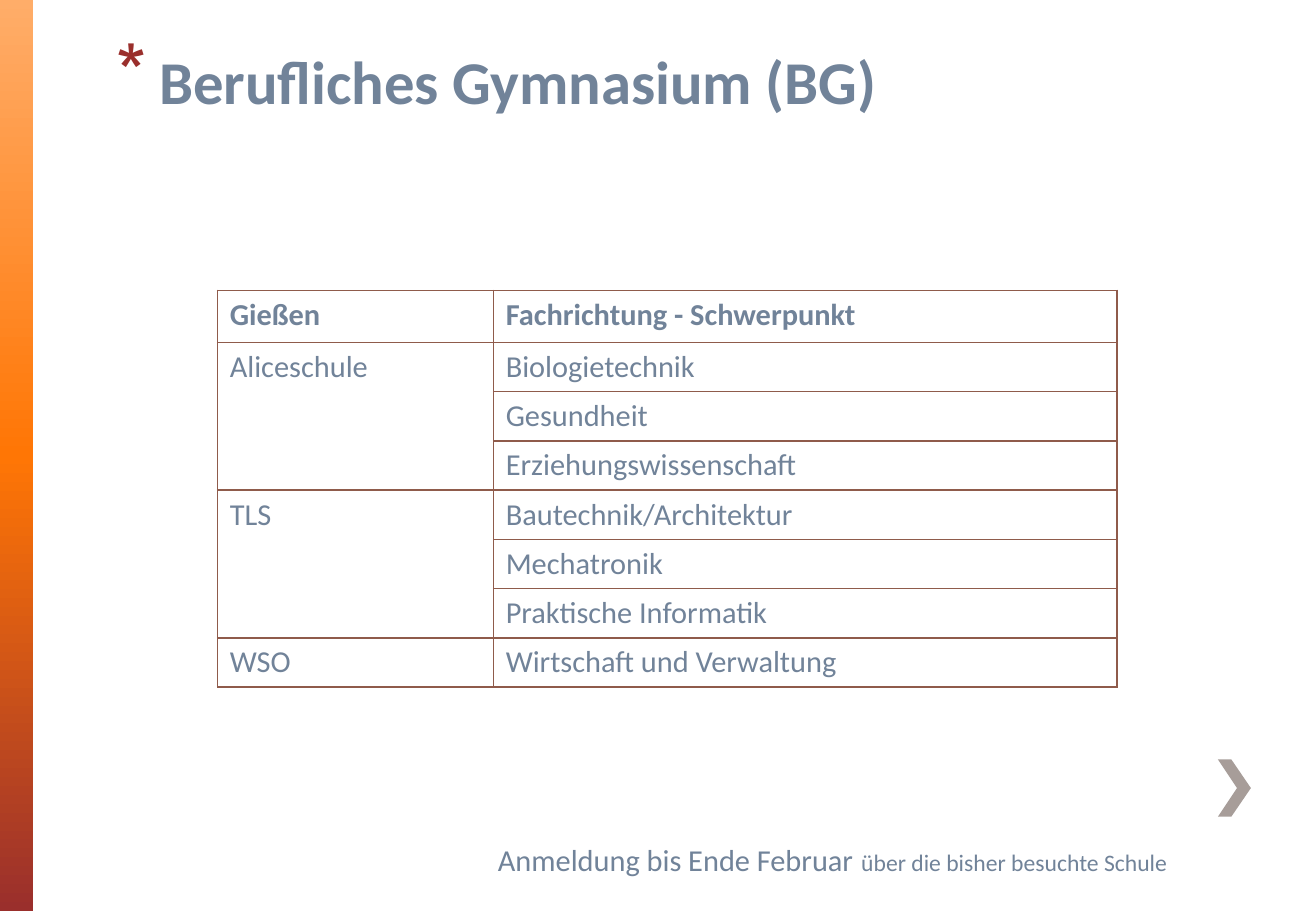
"""Build a slide listing the specialisations of the vocational grammar schools."""
from copy import deepcopy

from lxml import etree
from pptx import Presentation
from pptx.dml.color import RGBColor
from pptx.enum.shapes import MSO_SHAPE
from pptx.enum.text import MSO_ANCHOR, PP_ALIGN
from pptx.oxml import parse_xml
from pptx.oxml.ns import nsdecls, qn
from pptx.util import Cm, Pt

RECTANGLE = MSO_SHAPE.RECTANGLE
TOP = MSO_ANCHOR.TOP
LEFT = PP_ALIGN.LEFT
FONT = "Calibri"
SLATE = "718399"
RED = "9A2F2C"
BORDER = "8F5B4B"
BAR_STOPS = [("FFAD69", 0), ("FF7605", 0.5), (RED, 1)]
SCHOOLS = [
    ("Aliceschule", ["Biologietechnik", "Gesundheit", "Erziehungswissenschaft"]),
    ("TLS", ["Bautechnik/Architektur", "Mechatronik", "Praktische Informatik"]),
    ("WSO", ["Wirtschaft und Verwaltung"]),
]


def color(value):
    return RGBColor.from_string(value)


def style(font, size, bold=False):
    font.name = FONT
    font.size = Pt(size)
    font.bold = bold
    font.color.rgb = color(SLATE)


deck = Presentation()
deck.slide_width, deck.slide_height = Cm(27.51), Cm(19.05)
page = deck.slides.add_slide(deck.slide_layouts[5])

bar = page.shapes.add_shape(RECTANGLE, 0, 0, Cm(0.69), deck.slide_height)
bar.shadow.inherit = False
bar.line.fill.background()
bar.fill.gradient()
bar.fill.gradient_angle = 270
first_stop = bar.fill._fill._gradFill.gsLst[0]
first_stop.addnext(deepcopy(first_stop))
for stop, (value, position) in zip(bar.fill.gradient_stops, BAR_STOPS):
    stop.color.rgb = color(value)
    stop.position = position

outline = [(25.46, 15.88), (25.86, 16.48), (25.46, 17.08),
           (25.74, 17.08), (26.15, 16.48), (25.74, 15.88)]
points = [(Cm(x), Cm(y)) for x, y in outline]
builder = page.shapes.build_freeform(*points[0])
builder.add_line_segments(points[1:])
chevron = builder.convert_to_shape()
chevron.shadow.inherit = False
chevron.fill.solid()
chevron.fill.fore_color.rgb = color("A79D99")
chevron.line.fill.background()

title = page.shapes.title
title.left, title.top, title.width, title.height = Cm(2.18), Cm(0.97), Cm(23.72), Cm(2.11)
title.text_frame.text = "Berufliches Gymnasium (BG)"
title.text_frame.vertical_anchor = TOP
para = title.text_frame.paragraphs[0]
para.alignment = LEFT
para.line_spacing = 0.9
style(para.font, 36, True)
indent = Cm(0.89)
properties = para._p.get_or_add_pPr()
properties.set("marL", str(indent))
properties.set("indent", str(-indent))
bullet = parse_xml(
    f'<a:pPr {nsdecls("a")}><a:buClr><a:srgbClr val="{RED}"/></a:buClr>'
    '<a:buSzPct val="128000"/><a:buChar char="*"/></a:pPr>')
default_run = properties.find(qn("a:defRPr"))
for part in list(bullet):
    default_run.addprevious(part)

rows = [("Gießen", "Fachrichtung - Schwerpunkt")]
spans = []
for school, subjects in SCHOOLS:
    spans.append((len(rows), len(rows) + len(subjects) - 1))
    rows += [(school if index == 0 else "", subject) for index, subject in enumerate(subjects)]

table = page.shapes.add_table(len(rows), 2, Cm(4.55), Cm(6.07), Cm(18.8), Cm(8.23)).table
table.first_row = table.horz_banding = False
table.columns[0].width, table.columns[1].width = Cm(5.77), Cm(13.03)
for row_index, texts in enumerate(rows):
    is_header = row_index == 0
    table.rows[row_index].height = Cm(1.09 if is_header else 1.02)
    for column_index, text in enumerate(texts):
        cell = table.cell(row_index, column_index)
        cell.text = text
        style(cell.text_frame.paragraphs[0].font, 18, is_header)
        for side in ("lnL", "lnR", "lnT", "lnB"):
            edge = etree.SubElement(cell._tc.get_or_add_tcPr(), qn(f"a:{side}"), w=str(Pt(1)))
            paint = etree.SubElement(edge, qn("a:solidFill"))
            etree.SubElement(paint, qn("a:srgbClr"), val=BORDER)
        cell.fill.background()
for first, last in spans:
    if last > first:
        table.cell(first, 0).merge(table.cell(last, 0))

box = page.shapes.add_textbox(Cm(10.16), Cm(17.4), Cm(16.13), Cm(1.09))
box.text_frame.word_wrap = True
para = box.text_frame.paragraphs[0]
for text, size in [("Anmeldung bis Ende Februar", 18), (" ", 20),
                   ("über die bisher besuchte Schule", 14)]:
    span = para.add_run()
    span.text = text
    style(span.font, size)

deck.save("out.pptx")
